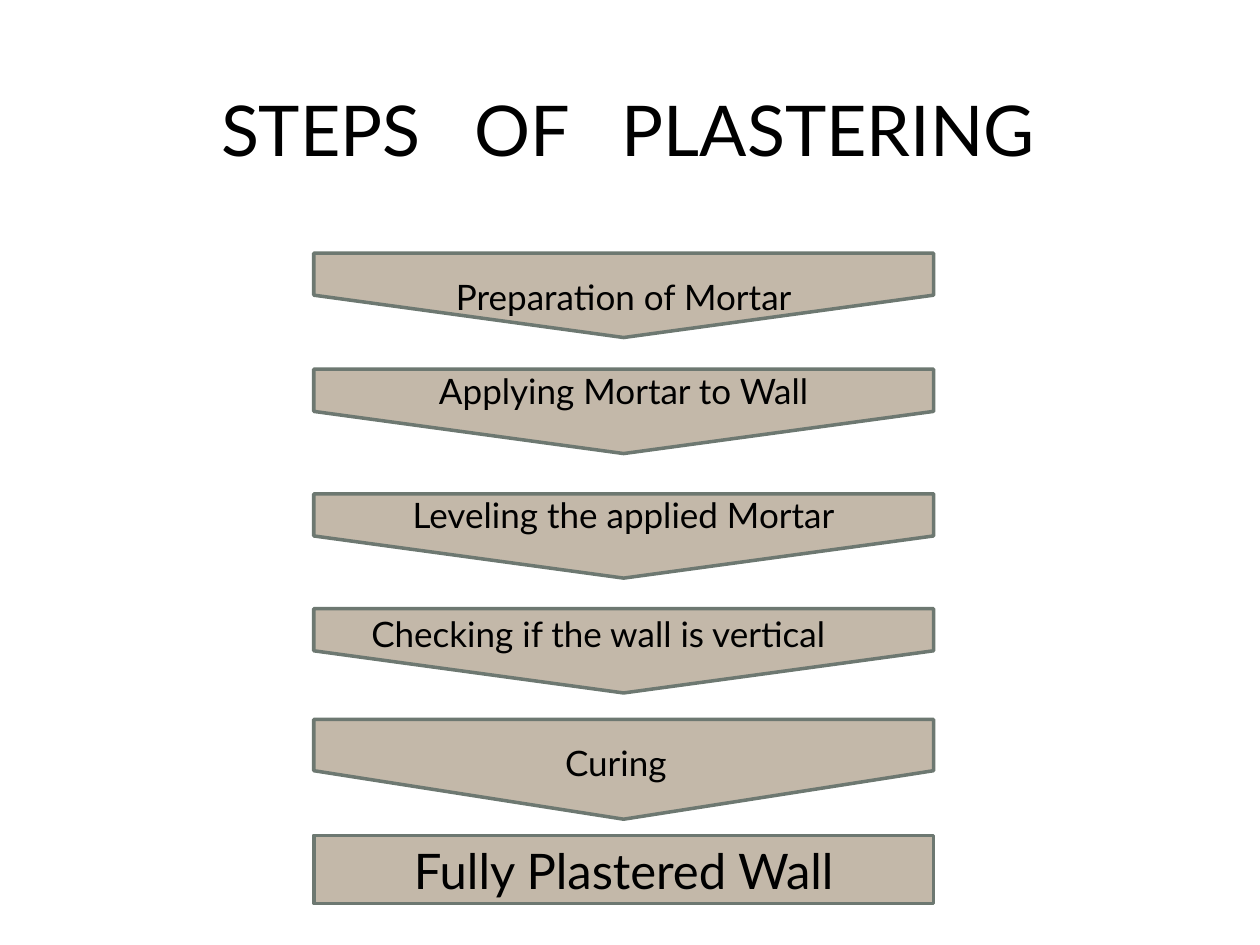
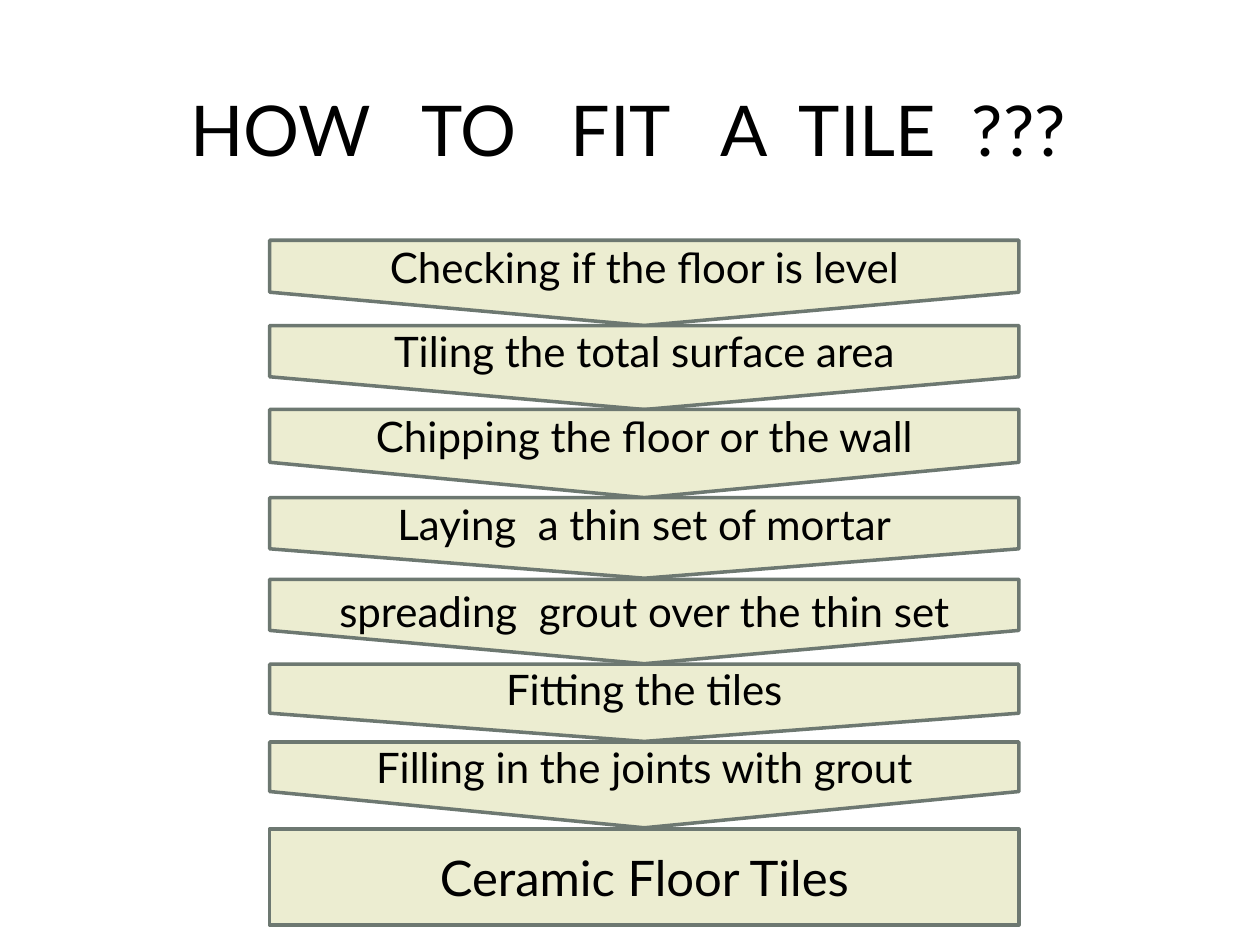
import pptx
import pptx.dml.color
import pptx.enum.shapes
import pptx.enum.text
import pptx.util

Pt = pptx.util.Pt
RGB = pptx.dml.color.RGBColor
Kind = pptx.enum.shapes.MSO_SHAPE

BLACK = RGB(0x00, 0x00, 0x00)
SLATE = RGB(0x6D, 0x78, 0x71)
TAUPE = RGB(0xC3, 0xB8, 0xA9)
CREAM = RGB(0xEC, 0xED, 0xD1)
FONT = "Lato"
TITLE = (33.8, 32.4, 650, 82)

# Each step: text, top, height, depth of the point,
# and for a label set apart: its middle, across from the axis and down from the top
PLASTER = [
    ("Preparation of Mortar", 144.7, 48.2, 24.2, (0, 25)),
    ("Applying Mortar to Wall", 211, 48.2, 24.1, None),
    ("Leveling the applied Mortar", 282.2, 48.2, 24.1, None),
    ("Checking if the wall is vertical", 347.8, 48.2, 24.1, (-14.5, 14)),
    ("Curing", 411.1, 57, 27.7, (-4.5, 24.5)),
]
TILING = [
    ("Checking if the floor is level", 137.3, 48.7, 19, None),
    ("Tiling the total surface area", 186, 48, 18.7, None),
    ("Chipping the floor or the wall", 234, 50.4, 20.2, None),
    ("Laying  a thin set of mortar", 284.4, 46, 16.8, None),
    ("spreading  grout over the thin set", 331.1, 48.2, 19, (0, 18)),
    ("Fitting the tiles", 379.6, 44.1, 16.1, None),
    ("Filling in the joints with grout", 424, 49, 20.7, None),
]


def write(shape, text, size):
    """Put one centred line of text in a shape."""
    frame = shape.text_frame
    frame.word_wrap = True
    frame.margin_top = frame.margin_bottom = 0
    frame.vertical_anchor = pptx.enum.text.MSO_ANCHOR.MIDDLE
    frame.text = text
    line = frame.paragraphs[0]
    line.alignment = pptx.enum.text.PP_ALIGN.CENTER
    font = line.runs[0].font
    font.name, font.size, font.color.rgb = FONT, Pt(size), BLACK


def label(slide, box, text, size):
    write(slide.shapes.add_textbox(*map(Pt, box)), text, size)


def block(slide, kind, box, fill):
    shape = slide.shapes.add_shape(kind, *map(Pt, box))
    shape.shadow.inherit = False
    shape.fill.solid()
    shape.fill.fore_color.rgb = fill
    shape.line.color.rgb = SLATE
    shape.line.width = Pt(2)
    return shape


def step(slide, box, point, text, size, fill, shift):
    left, top, width, height = box
    arrow = block(slide, Kind.DOWN_ARROW, box, fill)
    arrow.adjustments[0] = 1
    arrow.adjustments[1] = point / height
    if shift is None:
        write(arrow, text, size)
    else:
        across, down = shift
        tall = 1.5 * size
        place = (left + across, top + down - tall / 2, width, tall)
        label(slide, place, text, size)


def flow(deck, title, steps, size, end, box, fill):
    """Add a slide of stacked steps that lead to the end block in box."""
    slide = deck.slides.add_slide(deck.slide_layouts[6])
    label(slide, TITLE, title, 40)
    left, _, width, _ = box
    for text, top, height, point, shift in steps:
        step(slide, (left, top, width, height), point, text, size, fill, shift)
    write(block(slide, Kind.RECTANGLE, box, fill), end, 28)


def main():
    deck = pptx.Presentation()
    deck.slide_width, deck.slide_height = Pt(720), Pt(540)
    flow(deck, "STEPS   OF   PLASTERING", PLASTER, 20,
         "Fully Plastered Wall", (179.3, 477.4, 354.2, 38.9), TAUPE)
    flow(deck, "HOW   TO   FIT   A  TILE  ???", TILING, 24,
         "Ceramic Floor Tiles", (154.1, 473.8, 428.2, 54.7), CREAM)
    deck.save("out.pptx")


if __name__ == "__main__":
    main()
